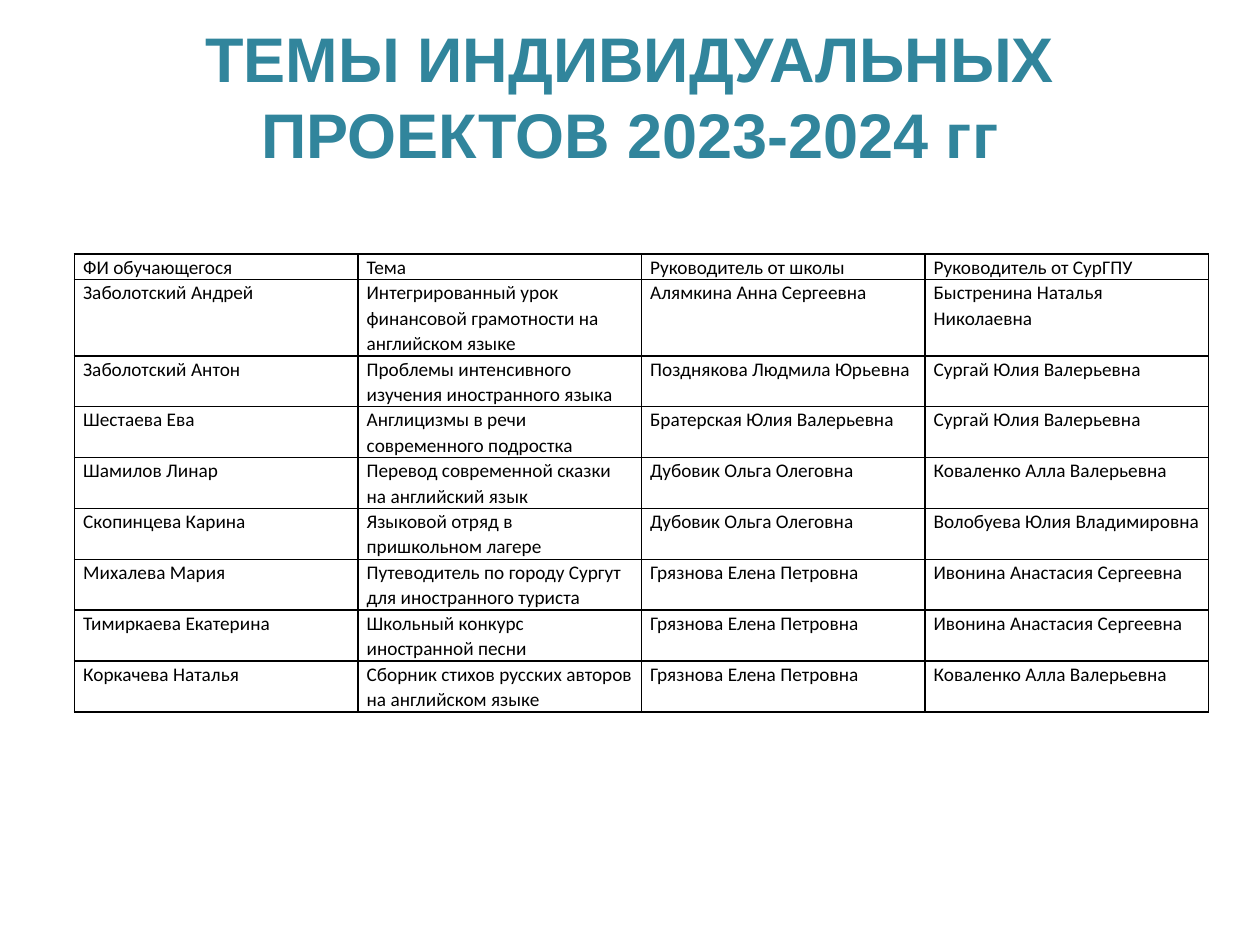
from dataclasses import dataclass

from lxml.etree import SubElement
from pptx import Presentation
from pptx.dml.color import RGBColor
from pptx.enum.text import MSO_ANCHOR, MSO_AUTO_SIZE, PP_ALIGN
from pptx.oxml.ns import qn
from pptx.util import Inches, Pt


@dataclass(frozen=True)
class Theme:
    title_color: str = "31859C"
    text_color: str = "000000"
    border_color: str = "000000"
    title_font: str = "Arial"
    text_font: str = "Calibri"
    title_size: int = 36
    text_size: int = 11
    border_width: int = 1
    line_spacing: float = 1.07
    cell_margin: float = 0.07


class SlideBuilder:
    GRID = 100

    def __init__(self, prs, theme):
        self.prs = prs
        self.theme = theme
        self.s = prs.slides.add_slide(prs.slide_layouts[5])

    def col(self, n):
        return round(self.prs.slide_width * n / self.GRID)

    def row(self, n):
        return round(self.prs.slide_height * n / self.GRID)

    def set_font(self, p, name, size, color, bold=False):
        p.font.name = name
        p.font.size = Pt(size)
        p.font.bold = bold
        p.font.color.rgb = RGBColor.from_string(color)

    def title(self, text, left, top, width, height):
        t = self.theme
        sp = self.s.shapes.title
        sp.left, sp.top = self.col(left), self.row(top)
        sp.width, sp.height = self.col(width), self.row(height)
        tf = sp.text_frame
        tf.text = text
        tf.word_wrap = True
        tf.auto_size = MSO_AUTO_SIZE.NONE
        tf.vertical_anchor = MSO_ANCHOR.MIDDLE
        p = tf.paragraphs[0]
        p.alignment = PP_ALIGN.CENTER
        self.set_font(p, t.title_font, t.title_size, t.title_color, True)

    def table(self, rows, line_counts, left, top, width, line_height):
        frame = self.s.shapes.add_table(
            len(rows), len(rows[0]), self.col(left), self.row(top),
            self.col(width), self.row(line_height * sum(line_counts)))
        table = frame.table
        table.first_row = table.horz_banding = False
        for i, (texts, lines) in enumerate(zip(rows, line_counts)):
            table.rows[i].height = self.row(line_height * lines)
            for j, text in enumerate(texts):
                self.cell(table.cell(i, j), text)

    def cell(self, cell, text):
        t = self.theme
        cell.margin_left = cell.margin_right = Inches(t.cell_margin)
        cell.margin_top = cell.margin_bottom = 0
        cell.text = text
        p = cell.text_frame.paragraphs[0]
        p.line_spacing = t.line_spacing
        self.set_font(p, t.text_font, t.text_size, t.text_color)
        self.borders(cell)
        cell.fill.background()

    def borders(self, cell):
        tc_pr = cell._tc.get_or_add_tcPr()
        for side in ("a:lnL", "a:lnR", "a:lnT", "a:lnB"):
            ln = SubElement(tc_pr, qn(side), w=str(Pt(self.theme.border_width)))
            fill = SubElement(ln, qn("a:solidFill"))
            SubElement(fill, qn("a:srgbClr"), val=self.theme.border_color)


PROJECTS = [
    ("ФИ обучающегося", "Тема", "Руководитель от школы", "Руководитель от СурГПУ"),
    ("Заболотский Андрей", "Интегрированный урок финансовой грамотности на английском языке",
     "Алямкина Анна Сергеевна", "Быстренина Наталья Николаевна"),
    ("Заболотский Антон", "Проблемы интенсивного изучения иностранного языка",
     "Позднякова Людмила Юрьевна", "Сургай Юлия Валерьевна"),
    ("Шестаева Ева", "Англицизмы в речи современного подростка",
     "Братерская Юлия Валерьевна", "Сургай Юлия Валерьевна"),
    ("Шамилов Линар", "Перевод современной сказки на английский язык",
     "Дубовик Ольга Олеговна", "Коваленко Алла Валерьевна"),
    ("Скопинцева Карина", "Языковой отряд в пришкольном лагере",
     "Дубовик Ольга Олеговна", "Волобуева Юлия Владимировна"),
    ("Михалева Мария", "Путеводитель по городу Сургут для иностранного туриста",
     "Грязнова Елена Петровна", "Ивонина Анастасия Сергеевна"),
    ("Тимиркаева Екатерина", "Школьный конкурс иностранной песни",
     "Грязнова Елена Петровна", "Ивонина Анастасия Сергеевна"),
    ("Коркачева Наталья", "Сборник стихов русских авторов на английском языке",
     "Грязнова Елена Петровна", "Коваленко Алла Валерьевна"),
]
LINE_COUNTS = [1, 3] + [2] * 7


def main():
    prs = Presentation()
    prs.slide_width, prs.slide_height = Inches(10), Inches(7.5)
    slide = SlideBuilder(prs, Theme())
    slide.title("ТЕМЫ ИНДИВИДУАЛЬНЫХ ПРОЕКТОВ 2023-2024 гг",
                left=5, top=1.73, width=90, height=16.67)
    slide.table(PROJECTS, LINE_COUNTS, left=5.9, top=26.9, width=90, line_height=2.69)
    prs.save("out.pptx")


if __name__ == "__main__":
    main()
